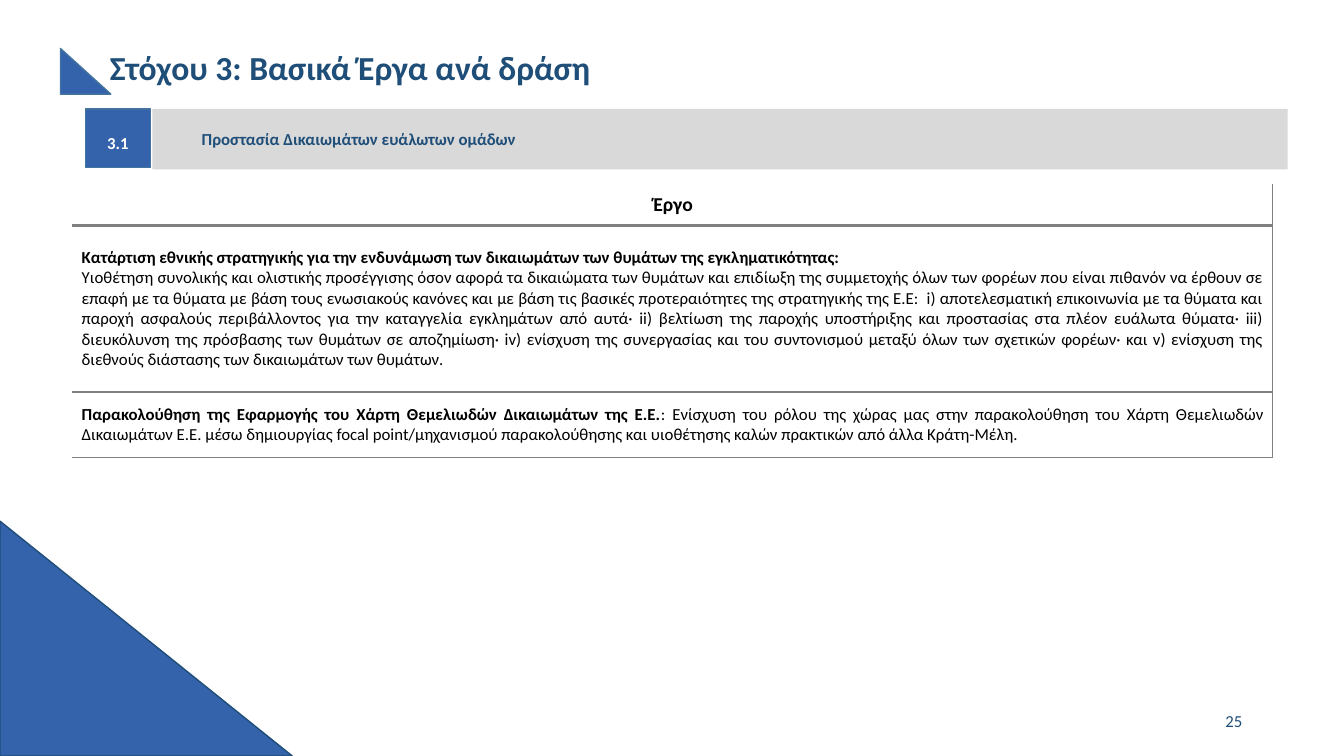
from dataclasses import dataclass

from lxml.etree import SubElement
from pptx import Presentation
from pptx.dml.color import RGBColor
from pptx.enum.shapes import MSO_SHAPE as Shape
from pptx.enum.text import MSO_ANCHOR as Anchor, PP_ALIGN as Align
from pptx.oxml.ns import qn
from pptx.util import Inches, Pt

COLORS = {
    "blue": "3462AB",
    "outline": "43739E",
    "navy": "1F4E79",
    "bar": "D9D9D9",
    "rule": "808080",
    "black": "000000",
    "white": "FFFFFF",
}
FONT = "Calibri"
PLAIN_TABLE_STYLE = "{2D5ABB26-0587-4C30-8999-92F81FD0307C}"
ROW_SHARES = (0.15, 0.61, 0.24)
THIN, THICK = 1, 2.25

# Each project is a list of paragraphs, each a list of (text, bold) runs.
PROJECTS = [
    [
        [("Κατάρτιση εθνικής στρατηγικής για την ενδυνάμωση των δικαιωμάτων "
          "των θυμάτων της εγκληματικότητας: ", True)],
        [("Υιοθέτηση συνολικής και ολιστικής προσέγγισης όσον αφορά τα δικαιώματα "
          "των θυμάτων και επιδίωξη της συμμετοχής όλων των φορέων που είναι πιθανόν "
          "να έρθουν σε επαφή με τα θύματα με βάση τους ενωσιακούς κανόνες και με βάση "
          "τις βασικές προτεραιότητες της στρατηγικής της Ε.Ε:  i) αποτελεσματική "
          "επικοινωνία με τα θύματα και παροχή ασφαλούς περιβάλλοντος για την "
          "καταγγελία εγκλημάτων από αυτά· ii) βελτίωση της παροχής υποστήριξης και "
          "προστασίας στα πλέον ευάλωτα θύματα· iii) διευκόλυνση της πρόσβασης των "
          "θυμάτων σε αποζημίωση· iv) ενίσχυση της συνεργασίας και του συντονισμού "
          "μεταξύ όλων των σχετικών φορέων· και v) ενίσχυση της διεθνούς διάστασης "
          "των δικαιωμάτων των θυμάτων.", False)],
    ],
    [
        [("Παρακολούθηση της Εφαρμογής του Χάρτη Θεμελιωδών Δικαιωμάτων της Ε.Ε.", True),
         (": Ενίσχυση του ρόλου της χώρας μας στην παρακολούθηση του Χάρτη Θεμελιωδών "
          "Δικαιωμάτων Ε.Ε. μέσω δημιουργίας focal point/μηχανισμού παρακολούθησης και "
          "υιοθέτησης καλών πρακτικών από άλλα Κράτη-Μέλη.", False)],
    ],
]


@dataclass
class Box:
    left: int
    top: int
    width: int
    height: int

    def inner(self, left, top, width, height):
        """Return an inner box given in percent of this one."""
        return Box(
            self.left + int(self.width * left / 100),
            self.top + int(self.height * top / 100),
            int(self.width * width / 100),
            int(self.height * height / 100),
        )

    def bounds(self):
        return self.left, self.top, self.width, self.height


def rgb(name):
    return RGBColor.from_string(COLORS[name])


def style_font(font, size, color, bold=False):
    font.name = FONT
    font.size = Pt(size)
    font.bold = bold
    font.color.rgb = rgb(color)


def write(text_frame, text, size, color, bold=False, align=Align.LEFT):
    text_frame.text = text
    text_frame.word_wrap = True
    text_frame.vertical_anchor = Anchor.MIDDLE
    paragraph = text_frame.paragraphs[0]
    paragraph.alignment = align
    style_font(paragraph.runs[0].font, size, color, bold)
    return paragraph


def add_block(slide, preset, box, fill, outline=None):
    shape = slide.shapes.add_shape(preset, *box.bounds())
    shape.shadow.inherit = False
    shape.fill.solid()
    shape.fill.fore_color.rgb = rgb(fill)
    if outline:
        shape.line.color.rgb = rgb(outline)
        shape.line.width = Pt(1)
    else:
        shape.line.fill.background()
    return shape


def add_heading(slide, box, text):
    title = slide.shapes.title
    title.left, title.top, title.width, title.height = box.inner(3.28, 0, 96.72, 100).bounds()
    write(title.text_frame, text, 24, "navy", True).line_spacing = 0.9
    add_block(slide, Shape.RIGHT_TRIANGLE, box.inner(0, 14, 4.2, 78), "blue", "outline")


def add_action_banner(slide, box, number, text):
    bar = add_block(slide, Shape.RECTANGLE, box.inner(5.54, 0, 94.46, 100), "bar")
    bar.text_frame.margin_left = Inches(0.49)
    write(bar.text_frame, text, 12, "navy", True)
    badge = add_block(slide, Shape.RECTANGLE, box.inner(0, 0, 5.37, 97), "blue", "outline")
    frame = badge.text_frame
    frame.margin_left = frame.margin_right = frame.margin_top = frame.margin_bottom = 0
    write(frame, number, 12, "white", True, Align.CENTER).line_spacing = 1.5


def set_borders(cell, **widths):
    """Draw the given sides (L, R, T, B) in points and clear the others."""
    cell.fill.background()
    properties = cell._tc.get_or_add_tcPr()
    for index, side in enumerate("LRTB"):
        line = SubElement(properties, qn(f"a:ln{side}"))
        properties.insert(index, line)
        if side in widths:
            line.set("w", str(Pt(widths[side])))
            fill = SubElement(line, qn("a:solidFill"))
            SubElement(fill, qn("a:srgbClr")).set("val", COLORS["rule"])
        else:
            SubElement(line, qn("a:noFill"))


def fill_project_cell(cell, paragraphs):
    frame = cell.text_frame
    for index, runs in enumerate(paragraphs):
        paragraph = frame.add_paragraph() if index else frame.paragraphs[0]
        paragraph.alignment = Align.JUSTIFY
        for text, bold in runs:
            run = paragraph.add_run()
            run.text = text
            style_font(run.font, 12, "black", bold)


def add_project_table(slide, box, header, projects):
    table = slide.shapes.add_table(len(projects) + 1, 1, *box.bounds()).table
    table.horz_banding = False
    table.first_row = False
    table._tbl.tblPr.find(qn("a:tableStyleId")).text = PLAIN_TABLE_STYLE
    for row, share in zip(table.rows, ROW_SHARES):
        row.height = int(box.height * share)
    cells = [row.cells[0] for row in table.rows]
    for cell in cells:
        cell.vertical_anchor = Anchor.MIDDLE
        cell.margin_left = Inches(0.1)
        cell.margin_right = cell.margin_top = cell.margin_bottom = Inches(0.08)
    header_cell, *project_cells = cells
    fill_header_cell(header_cell, header)
    for index, (cell, project) in enumerate(zip(project_cells, projects)):
        fill_project_cell(cell, project)
        set_borders(cell, R=THIN, T=THIN if index else THICK, B=THIN)


def fill_header_cell(cell, text):
    cell.text_frame.text = text
    paragraph = cell.text_frame.paragraphs[0]
    paragraph.alignment = Align.CENTER
    style_font(paragraph.runs[0].font, 14, "black", True)
    set_borders(cell, R=THIN, B=THICK)


def add_page_number(slide, box, number):
    frame = slide.shapes.add_textbox(*box.bounds()).text_frame
    write(frame, number, 12, "navy", align=Align.RIGHT)


def main():
    presentation = Presentation()
    presentation.slide_width, presentation.slide_height = Inches(13.33), Inches(7.5)
    page = Box(0, 0, presentation.slide_width, presentation.slide_height)
    slide = presentation.slides.add_slide(presentation.slide_layouts[5])

    add_block(slide, Shape.RIGHT_TRIANGLE, page.inner(0, 68.93, 21.75, 31.07), "blue", "navy")
    add_page_number(slide, page.inner(70.67, 92.67, 22.5, 5.33), "25")
    add_project_table(slide, page.inner(5.33, 24.4, 89.35, 36.13), "Έργο", PROJECTS)
    add_heading(slide, page.inner(4.5, 5.33, 89.2, 7.73), "Στόχου 3: Βασικά Έργα ανά δράση")
    add_action_banner(slide, page.inner(6.38, 14.4, 89.42, 8), "3.1",
                      "Προστασία Δικαιωμάτων ευάλωτων ομάδων")
    presentation.save("out.pptx")


if __name__ == "__main__":
    main()
